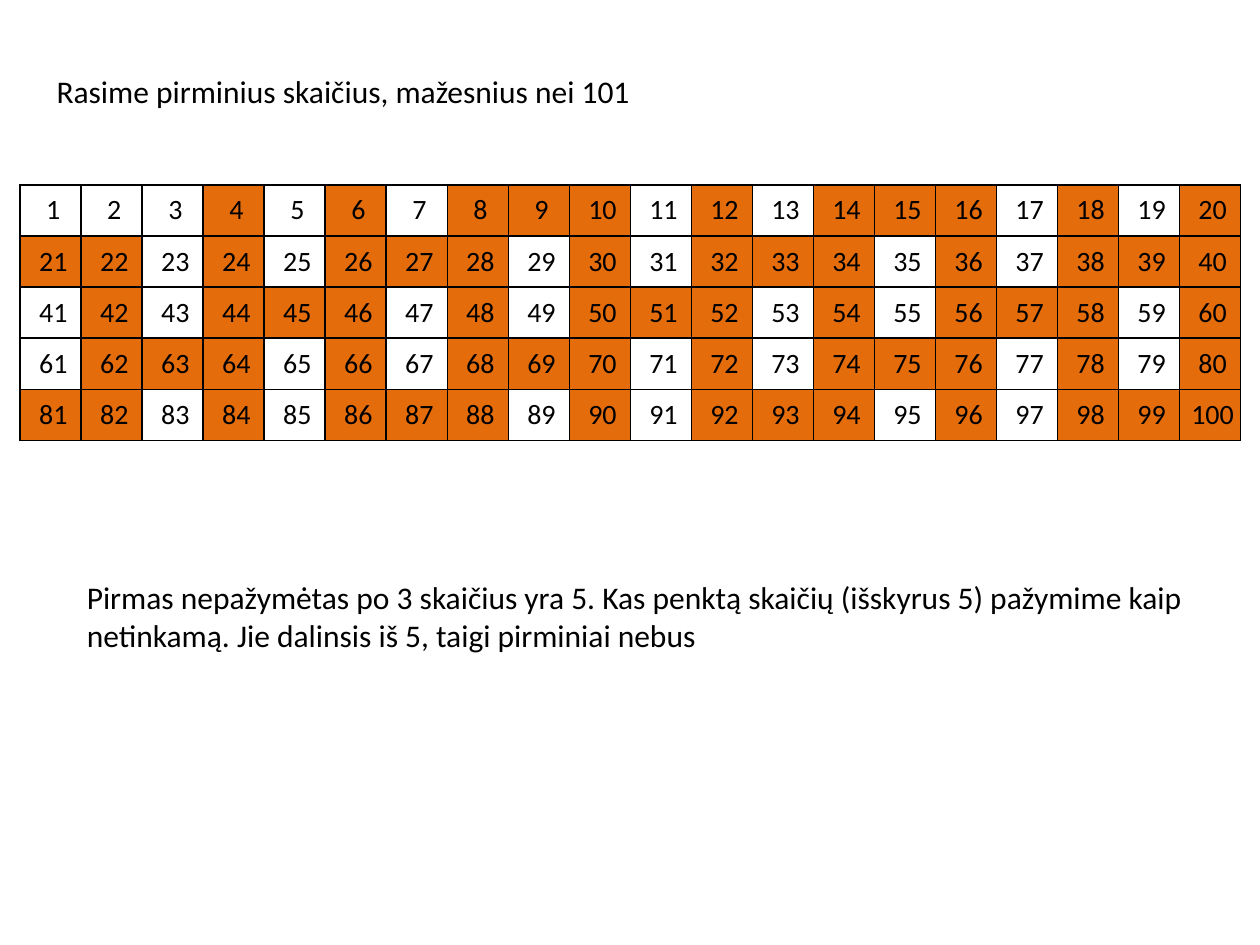
from lxml.etree import SubElement
from pptx import Presentation
from pptx.dml.color import RGBColor
from pptx.enum.text import MSO_AUTO_SIZE, MSO_VERTICAL_ANCHOR as Anchor, PP_ALIGN
from pptx.oxml.ns import qn
from pptx.util import Pt

BLACK = RGBColor(0x00, 0x00, 0x00)
WHITE = RGBColor(0xFF, 0xFF, 0xFF)
ORANGE = RGBColor(0xE4, 0x6C, 0x0A)

# text, (left, top, width, height)
TEXTS = [
    ("Rasime pirminius skaičius, mažesnius nei 101", (25.2, 37.5, 669, 29)),
    ("Pirmas nepažymėtas po 3 skaičius yra 5. Kas penktą skaičių (išskyrus 5) "
     "pažymime kaip netinkamą. Jie dalinsis iš 5, taigi pirminiai nebus",
     (42.5, 327, 646.5, 51)),
]
TEXT_SIZE = 18

SIEVED_PRIMES = (2, 3)
ROWS, COLUMNS = 5, 20
GRID_LEFT, GRID_TOP = 11.5, 105.6
COLUMN_WIDTH, ROW_HEIGHT = 34.88, 29.25
NUMBER_SIZE = 16
BORDER_WIDTH = 1
CELL_FORMAT = {
    "margin_left": Pt(6),
    "margin_right": Pt(3),
    "margin_top": Pt(3.6),
    "margin_bottom": Pt(3.6),
    "vertical_anchor": Anchor.MIDDLE,
}


def is_crossed_out(number):
    return any(number > prime and number % prime == 0 for prime in SIEVED_PRIMES)


def write(paragraph, text, size):
    run = paragraph.add_run()
    run.text = text
    for name, value in {"name": "Calibri", "size": Pt(size)}.items():
        setattr(run.font, name, value)
    run.font.color.rgb = BLACK


def add_borders(cell):
    """Draw all four sides; borders must precede the fill in the cell XML."""
    properties = cell._tc.get_or_add_tcPr()
    for side in ("a:lnL", "a:lnR", "a:lnT", "a:lnB"):
        line = SubElement(properties, qn(side), w=str(Pt(BORDER_WIDTH)))
        fill = SubElement(line, qn("a:solidFill"))
        SubElement(fill, qn("a:srgbClr"), val=str(BLACK))


def add_number_grid(slide):
    frame = slide.shapes.add_table(
        ROWS, COLUMNS, Pt(GRID_LEFT), Pt(GRID_TOP),
        Pt(COLUMNS * COLUMN_WIDTH), Pt(ROWS * ROW_HEIGHT))
    table = frame.table
    table.first_row = table.horz_banding = False
    for column in table.columns:
        column.width = Pt(COLUMN_WIDTH)
    for row in table.rows:
        row.height = Pt(ROW_HEIGHT)
    for number, cell in enumerate(table.iter_cells(), start=1):
        for name, value in CELL_FORMAT.items():
            setattr(cell, name, value)
        add_borders(cell)
        cell.fill.solid()
        cell.fill.fore_color.rgb = ORANGE if is_crossed_out(number) else WHITE
        paragraph = cell.text_frame.paragraphs[0]
        paragraph.alignment = PP_ALIGN.CENTER
        write(paragraph, str(number), NUMBER_SIZE)


def add_text(slide, text, box):
    frame = slide.shapes.add_textbox(*map(Pt, box)).text_frame
    frame.word_wrap = True
    frame.auto_size = MSO_AUTO_SIZE.SHAPE_TO_FIT_TEXT
    write(frame.paragraphs[0], text, TEXT_SIZE)


def main():
    presentation = Presentation()
    presentation.slide_width, presentation.slide_height = Pt(720), Pt(540)
    slide = presentation.slides.add_slide(presentation.slide_layouts[6])
    add_number_grid(slide)
    for text, box in TEXTS:
        add_text(slide, text, box)
    presentation.save("out.pptx")


if __name__ == "__main__":
    main()
